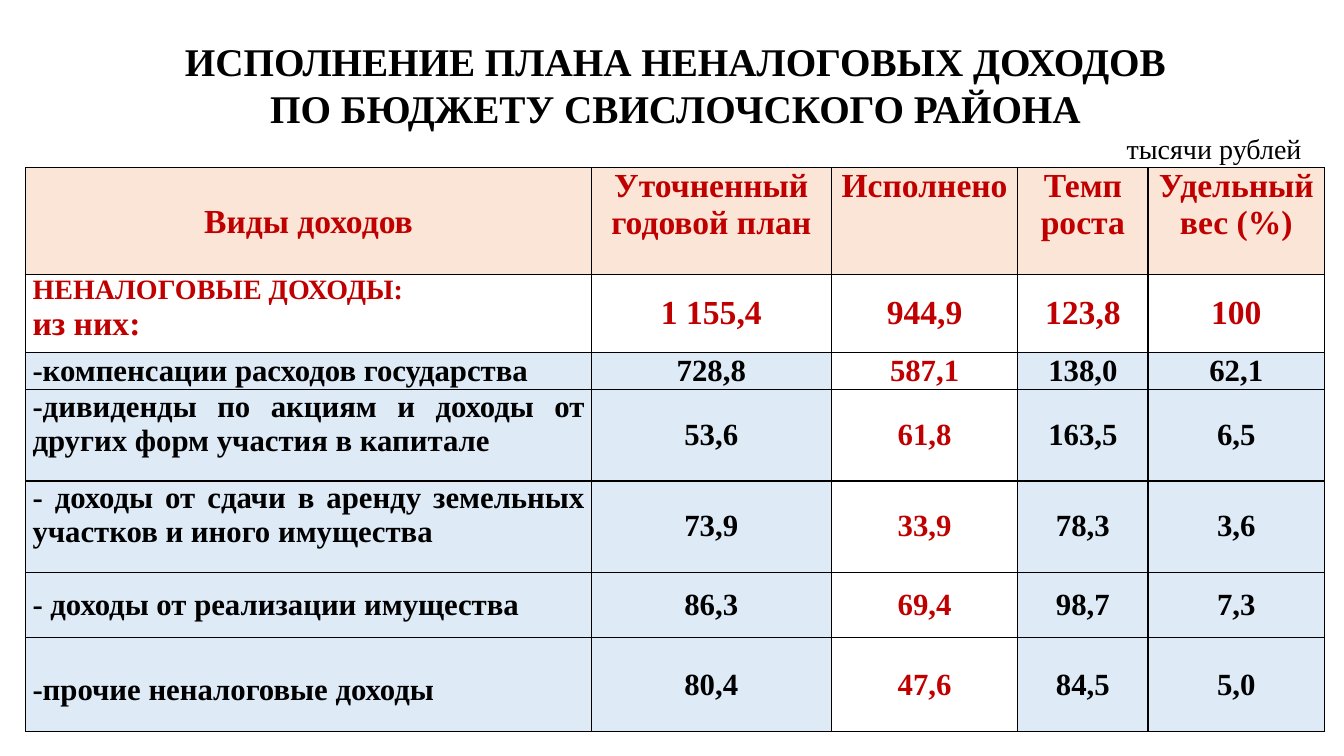
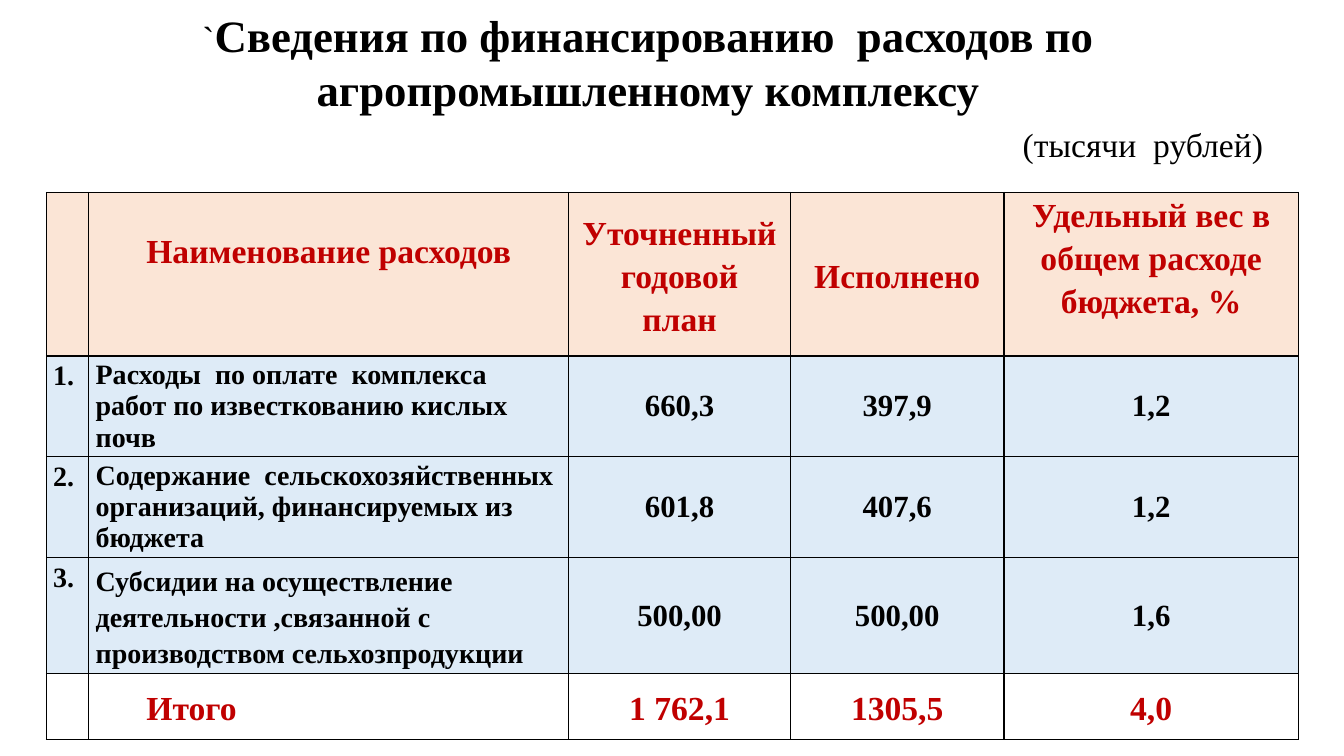
"""Build two budget slides, each with a title, a unit note and a table."""
from dataclasses import dataclass, replace
from itertools import cycle

from lxml import etree
from pptx import Presentation
from pptx import util as u
from pptx.dml import color as c
from pptx.enum import text as t
from pptx.oxml import ns


@dataclass(frozen=True)
class Theme:
    font: str = "Times New Roman"
    black: str = "000000"
    red: str = "C00000"
    peach: str = "FBE5D6"
    blue: str = "DEEBF7"
    white: str = "FFFFFF"
    small: int = 20
    body: int = 22
    large: int = 24
    mark: int = 26
    title: int = 28
    headline: int = 32


@dataclass(frozen=True)
class Look:
    sizes: tuple
    color: str
    fill: str
    align: object = t.PP_ALIGN.CENTER
    anchor: object = t.MSO_ANCHOR.MIDDLE
    spacing: float = 1.0
    top: float = 0
    left: float = 0.17


THEME = Theme()
TOP = t.MSO_ANCHOR.TOP
LEFT, JUSTIFY = t.PP_ALIGN.LEFT, t.PP_ALIGN.JUSTIFY

HEAD = Look((THEME.large,), THEME.red, THEME.peach)
HEAD_TOP = replace(HEAD, anchor=TOP)
HEAD_LOW = replace(HEAD_TOP, top=0.9)
TOTAL = replace(HEAD, fill=THEME.white)
GROUP = replace(TOTAL, sizes=(THEME.small, THEME.large), align=JUSTIFY, anchor=TOP)
VALUE = Look((THEME.body,), THEME.black, THEME.blue)
DONE = replace(VALUE, color=THEME.red, fill=THEME.white)
SOURCE = replace(VALUE, align=JUSTIFY)
SOURCE_TOP = replace(SOURCE, anchor=TOP)
SOURCE_LOW = replace(SOURCE_TOP, top=0.9)
ITEM = replace(VALUE, sizes=(THEME.small,), align=LEFT)
ITEM_LOOSE = replace(ITEM, spacing=1.15)
NUMBER = replace(ITEM_LOOSE, anchor=TOP)


class SlideBuilder:
    def __init__(self, theme):
        self.theme = theme
        self.deck = Presentation()
        self.deck.slide_width, self.deck.slide_height = u.Cm(33.87), u.Cm(19.05)
        self.page = None

    def add_page(self):
        self.page = self.deck.slides.add_slide(self.deck.slide_layouts[5])

    def style(self, para, size, color, bold, align):
        para.alignment = align
        for span in para.runs:
            span.font.name = self.theme.font
            span.font.size = u.Pt(size)
            span.font.bold = bold
            span.font.color.rgb = c.RGBColor.from_string(color)

    def place(self, box, left, top, width, height):
        box.left, box.top = u.Cm(left), u.Cm(top)
        box.width, box.height = u.Cm(width), u.Cm(height)

    def title(self, text, size, left, top, width, height):
        box = self.page.shapes.title
        self.place(box, left, top, width, height)
        frame = box.text_frame
        frame.text = text
        frame.word_wrap = True
        frame.auto_size = t.MSO_AUTO_SIZE.NONE
        frame.vertical_anchor = t.MSO_ANCHOR.MIDDLE
        for para in frame.paragraphs:
            self.style(para, size, self.theme.black, True, t.PP_ALIGN.CENTER)
        return frame

    def unit_note(self, text, size, right, top):
        width, height = 8, 1.2
        box = self.page.shapes.add_textbox(
            u.Cm(right - width), u.Cm(top), u.Cm(width), u.Cm(height))
        frame = box.text_frame
        frame.word_wrap = True
        frame.vertical_anchor = t.MSO_ANCHOR.MIDDLE
        frame.text = text
        self.style(frame.paragraphs[0], size, self.theme.black, False, t.PP_ALIGN.RIGHT)

    def table(self, left, top, widths, heights, rows):
        table = self.page.shapes.add_table(
            len(rows), len(widths), u.Cm(left), u.Cm(top),
            u.Cm(sum(widths)), u.Cm(sum(heights))).table
        for column, width in zip(table.columns, widths):
            column.width = u.Cm(width)
        for row, height, entries in zip(table.rows, heights, rows):
            row.height = u.Cm(height)
            for cell, (text, look) in zip(row.cells, entries):
                self.fill_cell(cell, text, look)

    def fill_cell(self, cell, text, look):
        self.border(cell)
        cell.fill.solid()
        cell.fill.fore_color.rgb = c.RGBColor.from_string(look.fill)
        cell.vertical_anchor = look.anchor
        cell.margin_left, cell.margin_right = u.Cm(look.left), u.Cm(0.17)
        cell.margin_top, cell.margin_bottom = u.Cm(look.top), u.Cm(0)
        cell.text_frame.text = text
        for para, size in zip(cell.text_frame.paragraphs, cycle(look.sizes)):
            para.line_spacing = look.spacing
            self.style(para, size, look.color, True, look.align)

    def border(self, cell):
        properties = cell._tc.get_or_add_tcPr()
        for side in ("a:lnL", "a:lnR", "a:lnT", "a:lnB"):
            line = etree.SubElement(properties, ns.qn(side), w=str(u.Pt(1)))
            fill = etree.SubElement(line, ns.qn("a:solidFill"))
            etree.SubElement(fill, ns.qn("a:srgbClr"), val=self.theme.black)


def styled(texts, *looks):
    """Pair texts with looks, repeating the last look as needed."""
    rest = looks[-1:] * (len(texts) - len(looks))
    return list(zip(texts, looks + rest))


def revenue_page(builder):
    builder.add_page()
    builder.title("ИСПОЛНЕНИЕ ПЛАНА НЕНАЛОГОВЫХ ДОХОДОВ\nПО БЮДЖЕТУ СВИСЛОЧСКОГО РАЙОНА",
                  THEME.title, 0.74, 0.8, 32.56, 2.64)
    builder.unit_note("тысячи рублей", THEME.small, 33.05, 3.13)
    sources = [
        (SOURCE, "-компенсации расходов государства", "728,8", "587,1", "138,0", "62,1"),
        (SOURCE_TOP, "-дивиденды по акциям и доходы от других форм участия в капитале",
         "53,6", "61,8", "163,5", "6,5"),
        (SOURCE_TOP, "- доходы от сдачи в аренду земельных участков и иного имущества",
         "73,9", "33,9", "78,3", "3,6"),
        (SOURCE, "- доходы от реализации имущества", "86,3", "69,4", "98,7", "7,3"),
        (SOURCE_LOW, "-прочие неналоговые доходы", "80,4", "47,6", "84,5", "5,0"),
    ]
    rows = [
        styled(("Виды доходов", "Уточненный\nгодовой план", "Исполнено", "Темп роста",
                "Удельный вес (%)"), HEAD_LOW, HEAD_TOP),
        styled(("НЕНАЛОГОВЫЕ ДОХОДЫ:\nиз них:", "1 155,4", "944,9", "123,8", "100"),
               GROUP, TOTAL),
    ]
    rows += [styled(texts, look, VALUE, DONE, VALUE) for look, *texts in sources]
    builder.table(0.65, 4.22, (14.25, 6.05, 4.7, 3.28, 4.45),
                  (2.7, 1.96, 0.94, 2.3, 2.3, 1.65, 2.37), rows)


def farming_page(builder):
    builder.add_page()
    frame = builder.title(
        "Сведения по финансированию  расходов по агропромышленному комплексу",
        THEME.headline, 0.79, 0, 31.09, 3.1)
    para = frame.paragraphs[0]
    heading = para.runs[0].text
    para.runs[0].text = "`"
    para.add_run().text = heading
    builder.style(para, THEME.headline, THEME.black, True, t.PP_ALIGN.CENTER)
    para.runs[0].font.size = u.Pt(THEME.mark)
    para.runs[0].font.bold = False
    builder.unit_note("(тысячи  рублей)", THEME.large, 32.08, 3.03)
    items = [
        (ITEM, "Расходы  по оплате  комплекса работ по известкованию кислых почв",
         "660,3", "397,9", "1,2"),
        (ITEM, "Содержание  сельскохозяйственных организаций, финансируемых из бюджета",
         "601,8", "407,6", "1,2"),
        (ITEM_LOOSE, "Субсидии на осуществление деятельности ,связанной с "
         "производством сельхозпродукции", "500,00", "500,00", "1,6"),
    ]
    head, head_top, head_low, total = (
        replace(look, spacing=1.15) for look in (HEAD, HEAD_TOP, HEAD_LOW, TOTAL))
    rows = [styled(("", "Наименование расходов", "Уточненный годовой\nплан", "Исполнено",
                    "Удельный вес в общем расходе бюджета, %"),
                   head, head_low, head, head, head_top)]
    rows += [styled((f"{number}.", *texts), NUMBER, look, VALUE)
             for number, (look, *texts) in enumerate(items, 1)]
    rows.append(styled(("", "Итого", "1 762,1", "1305,5", "4,0"),
                       total, replace(total, align=LEFT, left=1.45), total))
    builder.table(1.17, 4.85, (1.07, 12.09, 5.59, 5.38, 7.42),
                  (4.12, 2.54, 2.54, 2.84, 1.65), rows)


def main():
    builder = SlideBuilder(THEME)
    revenue_page(builder)
    farming_page(builder)
    builder.deck.save("out.pptx")


if __name__ == "__main__":
    main()
